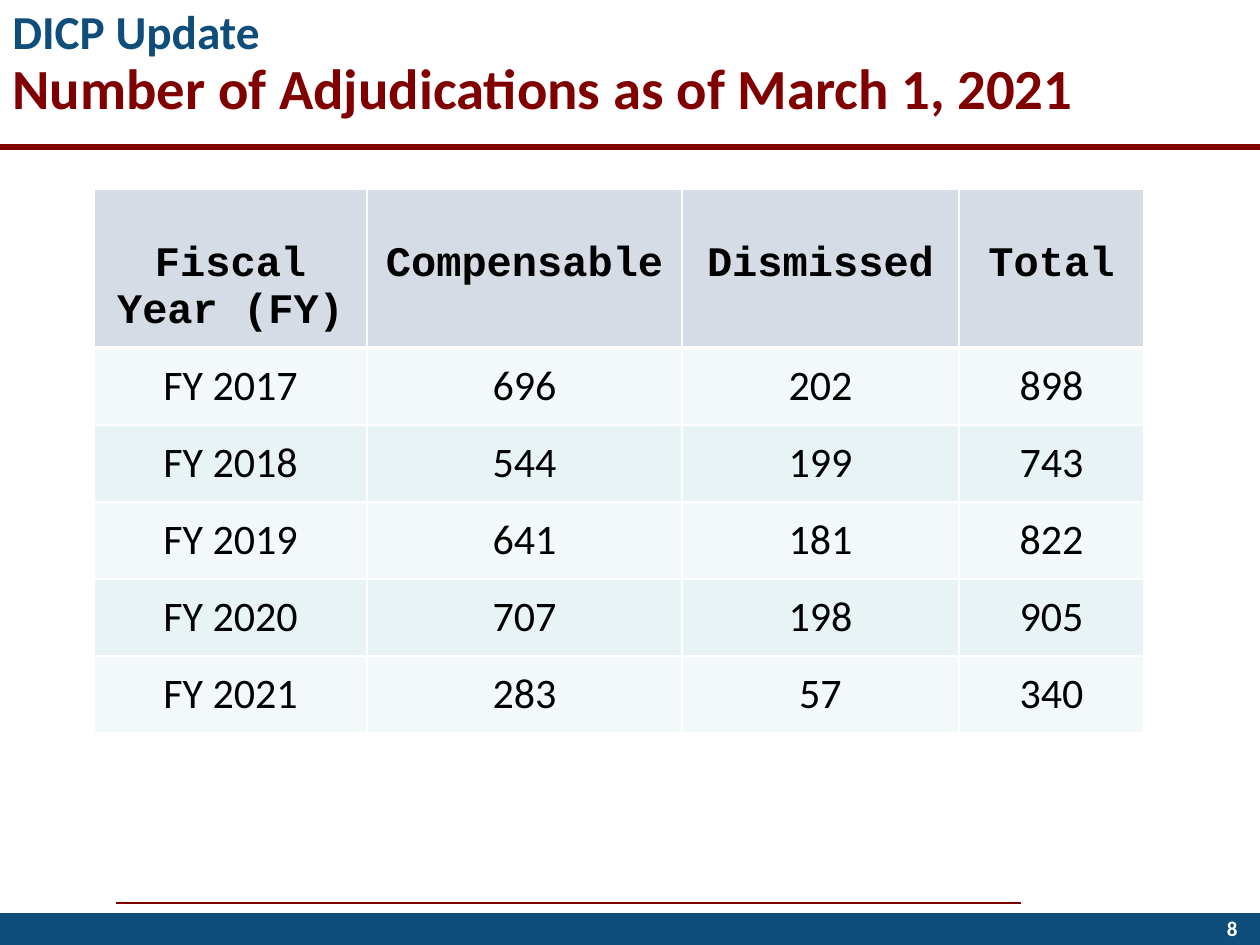
from lxml import etree
from pptx import Presentation
from pptx.dml.color import RGBColor
from pptx.enum.shapes import MSO_CONNECTOR, MSO_SHAPE
from pptx.enum.text import MSO_ANCHOR, PP_ALIGN
from pptx.oxml.ns import qn
from pptx.util import Emu, Pt

CENTER, RIGHT = PP_ALIGN.CENTER, PP_ALIGN.RIGHT
TOP, MIDDLE = MSO_ANCHOR.TOP, MSO_ANCHOR.MIDDLE
NAVY, MAROON, WHITE, BLACK = "0F4D7B", "800000", "FFFFFF", "000000"
HEADER_FILL, ODD_FILL, EVEN_FILL = "D6DCE5", "F3F9FA", "E7F3F4"

# Content
TITLE = [("DICP Update", 27, NAVY),
         ("Number of Adjudications as of March 1, 2021", 32.4, MAROON)]
HEADERS = ["Fiscal Year (FY)", "Compensable", "Dismissed", "Total"]
ROWS = [("FY 2017", 696, 202, 898),
        ("FY 2018", 544, 199, 743),
        ("FY 2019", 641, 181, 822),
        ("FY 2020", 707, 198, 905),
        ("FY 2021", 283, 57, 340)]
PAGE = "8"

# Layout in px, 126 to the inch
SLIDE_W, SLIDE_H = 1260, 945
COL_WIDTHS = [273, 315, 277, 185]
HEADER_H, ROW_H, HEADER_INSET = 154, 77, 52
RULES = [(116, 1021, 903, 1.5), (0, SLIDE_W, 147, 3)]  # x1, x2, y, points


def px(n):
    return Emu(round(n * 914400 / 126))


def rgb(color):
    return RGBColor.from_string(color)


def add_run(p, text, size, color, bold=False, font="Calibri"):
    r = p.add_run()
    r.text = text
    r.font.name, r.font.size, r.font.bold = font, Pt(size), bold
    r.font.color.rgb = rgb(color)


def add_text_box(s, x, y, w, h, anchor):
    tf = s.shapes.add_textbox(px(x), px(y), px(w), px(h)).text_frame
    tf.word_wrap = True
    tf.vertical_anchor = anchor
    return tf


def add_rule(s, x1, x2, y, width):
    line = s.shapes.add_connector(MSO_CONNECTOR.STRAIGHT, px(x1), px(y), px(x2), px(y))
    line.line.color.rgb = rgb(MAROON)
    line.line.width = Pt(width)
    etree.SubElement(line._element.spPr, qn("a:effectLst"))


def set_borders(cell, top, bottom):
    tcPr = cell._tc.get_or_add_tcPr()
    for i, (side, width) in enumerate([("L", 1), ("R", 1), ("T", top), ("B", bottom)]):
        ln = etree.Element(qn(f"a:ln{side}"), w=str(Pt(width)))
        fill = etree.SubElement(ln, qn("a:solidFill"))
        etree.SubElement(fill, qn("a:srgbClr"), val=WHITE)
        tcPr.insert(i, ln)


prs = Presentation()
prs.slide_width, prs.slide_height = px(SLIDE_W), px(SLIDE_H)
s = prs.slides.add_slide(prs.slide_layouts[6])

# Rules and footer band
for rule in RULES:
    add_rule(s, *rule)
band = s.shapes.add_shape(MSO_SHAPE.RECTANGLE, 0, px(913), px(SLIDE_W), px(32))
band.shadow.inherit = False
band.fill.solid()
band.fill.fore_color.rgb = rgb(NAVY)
band.line.fill.background()

# Title
tf = add_text_box(s, 0, 9, 1270, 126, TOP)
tf.margin_top = 0
p = tf.paragraphs[0]
p.line_spacing = 0.9
for i, (text, size, color) in enumerate(TITLE):
    if i:
        p.add_line_break()
    add_run(p, text, size, color, bold=True)

# Table of adjudications
table = s.shapes.add_table(len(ROWS) + 1, len(HEADERS), px(94), px(189),
                           px(sum(COL_WIDTHS)), px(HEADER_H + ROW_H * len(ROWS))).table
for col, width in zip(table.columns, COL_WIDTHS):
    col.width = px(width)
for i, values in enumerate([HEADERS] + ROWS):
    header = i == 0
    table.rows[i].height = px(HEADER_H if header else ROW_H)
    for j, value in enumerate(values):
        cell = table.cell(i, j)
        cell.fill.solid()
        cell.fill.fore_color.rgb = rgb(HEADER_FILL if header else ODD_FILL if i % 2 else EVEN_FILL)
        cell.vertical_anchor = TOP if header else MIDDLE
        if header:
            cell.margin_top = px(HEADER_INSET)
        set_borders(cell, top=3 if i == 1 else 1, bottom=3 if header else 1)
        p = cell.text_frame.paragraphs[0]
        p.alignment = CENTER
        add_run(p, str(value), 24, BLACK, header, "Courier New" if header else "Calibri")

# Page number
p = add_text_box(s, 966, 903, 284, 50, MIDDLE).paragraphs[0]
p.alignment = RIGHT
add_run(p, PAGE, 12, WHITE, bold=True)

prs.save("out.pptx")
